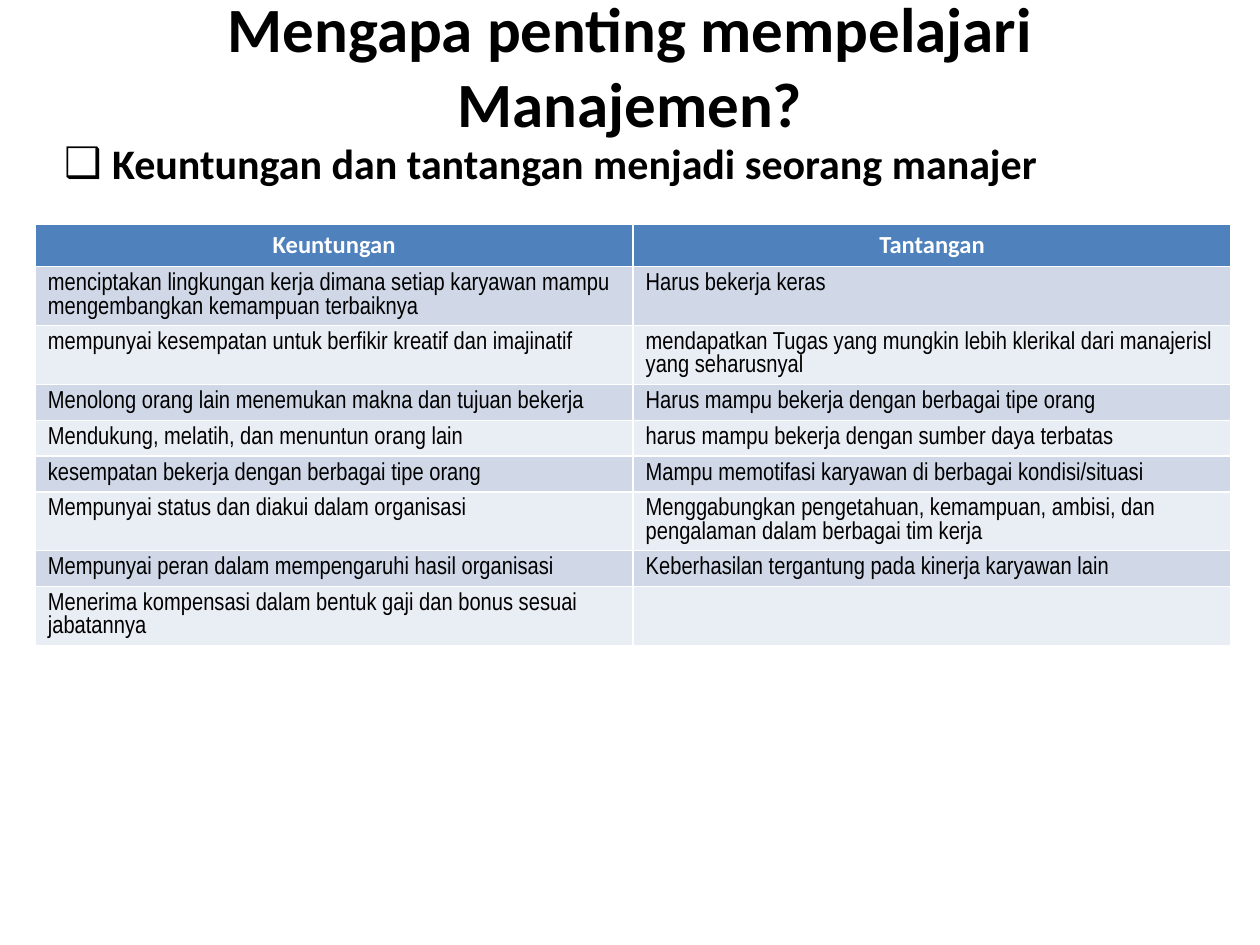
from dataclasses import dataclass

from lxml.etree import SubElement
from pptx import Presentation
from pptx.dml.color import RGBColor
from pptx.enum.text import MSO_ANCHOR, MSO_AUTO_SIZE, PP_ALIGN
from pptx.oxml.ns import qn
from pptx.util import Inches, Pt


@dataclass(frozen=True)
class Theme:
    heading_font: str = "Calibri"
    cell_font: str = "Arial Narrow"
    title_size: int = 36
    subtitle_size: int = 24
    table_size: int = 14
    text: str = "000000"
    header_text: str = "FFFFFF"
    header_fill: str = "4F81BD"
    band_fills: tuple = ("D0D8E8", "E9EDF4")


THEME = Theme()

HEADERS = ("Keuntungan", "Tantangan")
ROWS = (
    ("menciptakan lingkungan kerja dimana setiap karyawan mampu mengembangkan kemampuan terbaiknya",
     "Harus bekerja keras"),
    ("mempunyai kesempatan untuk berfikir kreatif dan imajinatif",
     "mendapatkan Tugas yang mungkin lebih klerikal dari manajerisl yang seharusnyal"),
    ("Menolong orang lain menemukan makna dan tujuan bekerja",
     "Harus mampu bekerja dengan berbagai tipe orang"),
    ("Mendukung, melatih, dan menuntun orang lain",
     "harus mampu bekerja dengan sumber daya terbatas"),
    ("kesempatan bekerja dengan berbagai tipe orang",
     "Mampu memotifasi karyawan di berbagai kondisi/situasi"),
    ("Mempunyai status dan diakui dalam organisasi",
     "Menggabungkan pengetahuan, kemampuan, ambisi, dan pengalaman dalam berbagai tim kerja"),
    ("Mempunyai peran dalam mempengaruhi hasil organisasi",
     "Keberhasilan tergantung pada kinerja karyawan lain"),
    ("Menerima kompensasi dalam bentuk gaji dan bonus sesuai jabatannya", ""),
)
ONE_LINE, TWO_LINES = 0.2, 0.34
LINE_LIMIT = 60  # characters that fit on one line of a cell


def place(shape, left, top, width, height):
    box = {"left": left, "top": top, "width": width, "height": height}
    for name, value in box.items():
        setattr(shape, name, Inches(value))


def add_text(paragraph, text, font, size, color, bold):
    run = paragraph.add_run()
    run.text = text
    values = {"name": font, "size": Pt(size), "bold": bold}
    for name, value in values.items():
        setattr(run.font, name, value)
    run.font.color.rgb = RGBColor.from_string(color)


def fill_title(title):
    place(title, 0.5, 0.05, 9, 1.53)
    frame = title.text_frame
    frame.auto_size = MSO_AUTO_SIZE.NONE
    frame.vertical_anchor = MSO_ANCHOR.MIDDLE
    paragraph = frame.paragraphs[0]
    paragraph.alignment = PP_ALIGN.CENTER
    add_text(paragraph, "Mengapa penting mempelajari Manajemen?",
             THEME.heading_font, THEME.title_size, THEME.text, True)
    paragraph.add_line_break()
    SubElement(paragraph._p, qn("a:endParaRPr"), sz=str(THEME.title_size * 100))


def fill_subtitle(body):
    place(body, 0.41, 1.04, 9, 0.59)
    body.text_frame.auto_size = MSO_AUTO_SIZE.NONE
    paragraph = body.text_frame.paragraphs[0]
    add_text(paragraph, "Keuntungan dan tantangan menjadi seorang manajer",
             THEME.heading_font, THEME.subtitle_size, THEME.text, True)
    properties = paragraph._p.get_or_add_pPr()
    properties.set("marL", str(Inches(0.38)))
    properties.set("indent", str(-Inches(0.38)))
    SubElement(properties, qn("a:buChar"), char="❑")


def fill_cell(cell, text, fill, font, color, bold=False, alignment=None):
    cell.fill.solid()
    cell.fill.fore_color.rgb = RGBColor.from_string(fill)
    paragraph = cell.text_frame.paragraphs[0]
    paragraph.alignment = alignment
    if text:
        add_text(paragraph, text, font, THEME.table_size, color, bold)


def add_comparison_table(slide):
    frame = slide.shapes.add_table(
        len(ROWS) + 1, len(HEADERS),
        Inches(0.28), Inches(1.78), Inches(9.49), Inches(3.71))
    table = frame.table
    table.rows[0].height = Inches(ONE_LINE)
    for column, header in enumerate(HEADERS):
        fill_cell(table.cell(0, column), header, THEME.header_fill,
                  THEME.heading_font, THEME.header_text, True, PP_ALIGN.CENTER)
    for index, texts in enumerate(ROWS):
        wraps = max(map(len, texts)) > LINE_LIMIT
        table.rows[index + 1].height = Inches(TWO_LINES if wraps else ONE_LINE)
        for column, text in enumerate(texts):
            fill_cell(table.cell(index + 1, column), text,
                      THEME.band_fills[index % 2], THEME.cell_font, THEME.text)
    frame.height = Inches(3.71)


def main():
    presentation = Presentation()
    presentation.slide_width = Inches(10)
    presentation.slide_height = Inches(7.5)
    slide = presentation.slides.add_slide(presentation.slide_layouts[1])
    fill_title(slide.shapes.title)
    fill_subtitle(slide.placeholders[1])
    add_comparison_table(slide)
    presentation.save("out.pptx")


if __name__ == "__main__":
    main()
